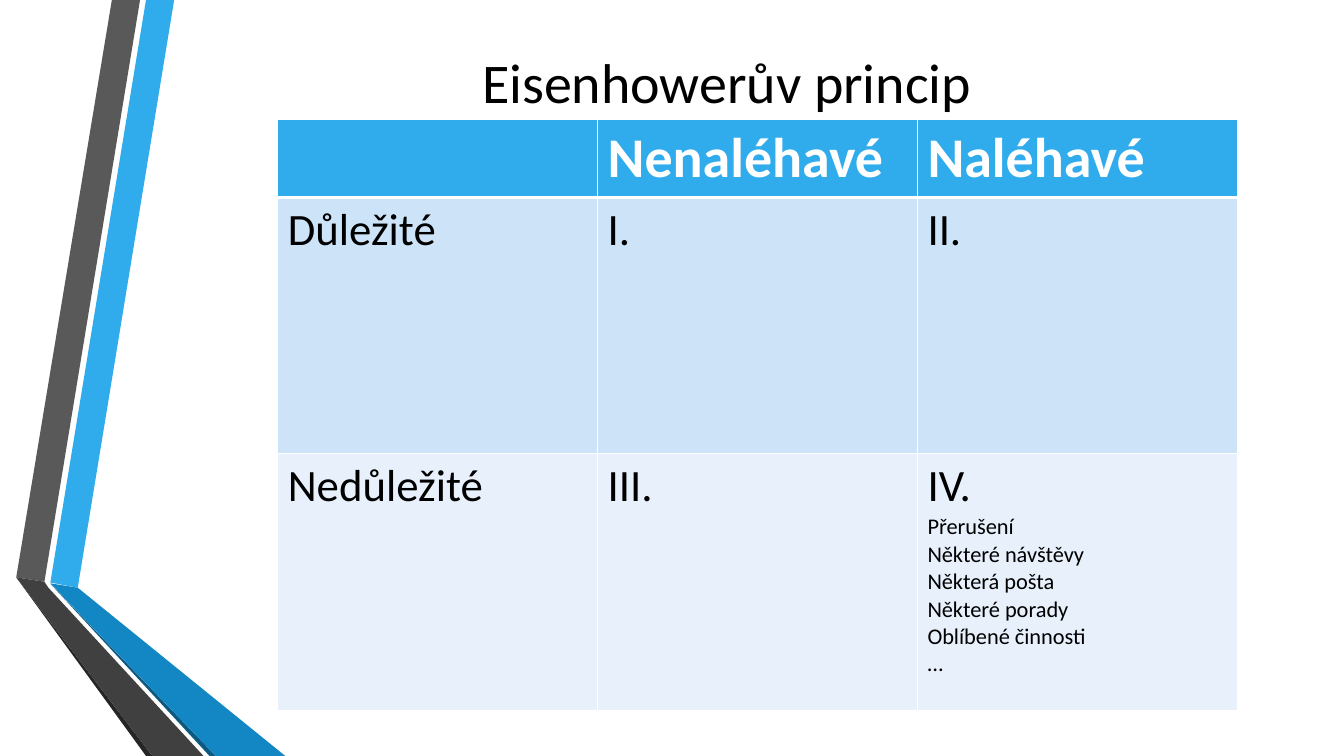
from lxml.etree import SubElement
from pptx import Presentation
from pptx.dml.color import RGBColor
from pptx.enum.text import MSO_ANCHOR as Anchor, PP_ALIGN as Align
from pptx.oxml.ns import qn
from pptx.util import Cm, Pt

FONT = "Calibri"
COLORS = {
    "white": "FFFFFF",
    "black": "000000",
    "blue": "30ACEC",
    "mid_blue": "1287C3",
    "deep_blue": "0C5A82",
    "gray": "595959",
    "dark_gray": "404040",
    "deep_gray": "262626",
    "band": "CDE3F8",
    "light_band": "E8F1FB",
}
RIBBONS = [
    ("blue", [(1.27, 14.68), (1.96, 14.81), (4.39, 0), (3.68, 0)]),
    ("gray", [(3.53, 0), (2.82, 0), (0.41, 14.55), (1.12, 14.66)]),
    ("deep_gray", [(0.41, 14.55), (3.68, 19.05), (3.84, 19.05)]),
    ("deep_blue", [(1.27, 14.71), (5.28, 19.05), (5.44, 19.05)]),
    ("mid_blue", [(1.27, 14.7), (5.44, 19.05), (7.19, 19.05), (1.96, 14.81)]),
    ("dark_gray", [(5.13, 19.05), (1.22, 14.81), (1.12, 14.66),
                   (0.41, 14.55), (3.84, 19.05)]),
]
ACTIVITIES = ["Přerušení", "Některé návštěvy", "Některá pošta",
              "Některé porady", "Oblíbené činnosti", "…"]
MATRIX = [
    [[], ["Nenaléhavé"], ["Naléhavé"]],
    [["Důležité"], ["I."], ["II."]],
    [["Nedůležité"], ["III."], ["IV.", *ACTIVITIES]],
]
ROW_HEIGHTS = [1.96, 6.46, 6.46]
ROW_FILLS = ["blue", "band", "light_band"]


def color(name):
    return RGBColor.from_string(COLORS[name])


def add_run(paragraph, text, size, color_name, bold=False):
    run = paragraph.add_run()
    run.text = text
    run.font.name = FONT
    run.font.size = Pt(size)
    run.font.bold = bold
    run.font.color.rgb = color(color_name)


def add_ribbon(slide, color_name, points):
    corners = [(Cm(x), Cm(y)) for x, y in points]
    builder = slide.shapes.build_freeform(*corners[0])
    builder.add_line_segments(corners[1:], close=True)
    shape = builder.convert_to_shape()
    shape.shadow.inherit = False
    shape.fill.solid()
    shape.fill.fore_color.rgb = color(color_name)
    shape.line.fill.background()


def set_title(slide, text):
    title = slide.shapes.title
    title.left, title.top = Cm(4.39), Cm(0.56)
    title.width, title.height = Cm(27.84), Cm(2.95)
    title.text_frame.vertical_anchor = Anchor.MIDDLE
    paragraph = title.text_frame.paragraphs[0]
    paragraph.alignment = Align.CENTER
    add_run(paragraph, text, 40, "black")


def set_borders(cell, top, bottom):
    properties = cell._tc.get_or_add_tcPr()
    widths = {"a:lnL": 1, "a:lnR": 1, "a:lnT": top, "a:lnB": bottom}
    for tag, width in widths.items():
        line = SubElement(properties, qn(tag), w=str(Pt(width)))
        fill = SubElement(line, qn("a:solidFill"))
        SubElement(fill, qn("a:srgbClr"), val=COLORS["white"])


def fill_cell(cell, lines, row, column):
    header = row == 0
    set_borders(cell, 3 if row == 1 else 1, 3 if header else 1)
    cell.fill.solid()
    cell.fill.fore_color.rgb = color(ROW_FILLS[row])
    frame = cell.text_frame
    for index, text in enumerate(lines):
        paragraph = frame.add_paragraph() if index else frame.paragraphs[0]
        if column == 0:
            paragraph.space_before = paragraph.space_after = Pt(18)
        size = 40 if header else 16 if index else 32
        add_run(paragraph, text, size, "white" if header else "black", header)


def add_matrix(slide):
    table = slide.shapes.add_table(
        len(MATRIX), len(MATRIX[0]), Cm(7), Cm(3), Cm(24.18), Cm(sum(ROW_HEIGHTS))
    ).table
    for row, cells in enumerate(MATRIX):
        table.rows[row].height = Cm(ROW_HEIGHTS[row])
        for column, lines in enumerate(cells):
            fill_cell(table.cell(row, column), lines, row, column)


def main():
    presentation = Presentation()
    presentation.slide_width, presentation.slide_height = Cm(33.87), Cm(19.05)
    slide = presentation.slides.add_slide(presentation.slide_layouts[5])
    for color_name, points in RIBBONS:
        add_ribbon(slide, color_name, points)
    set_title(slide, "Eisenhowerův princip")
    add_matrix(slide)
    presentation.save("out.pptx")


if __name__ == "__main__":
    main()
